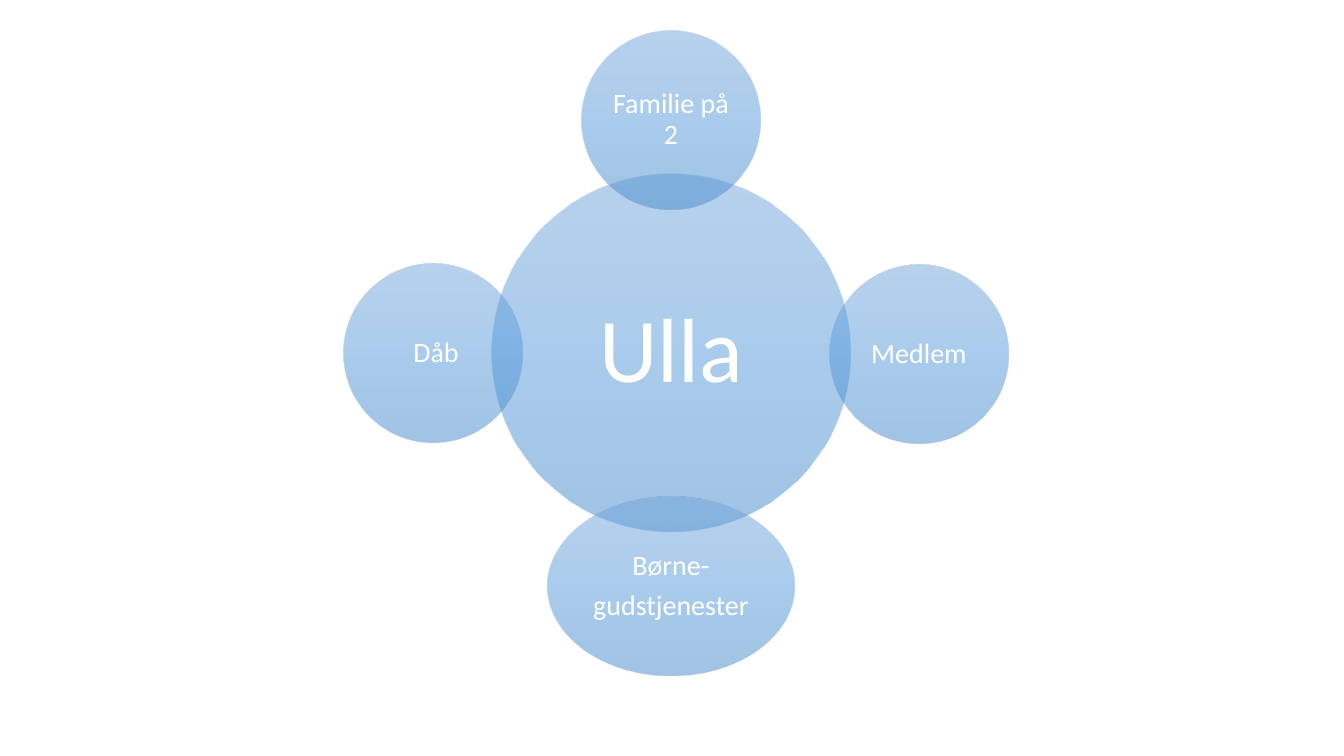
from dataclasses import dataclass

from lxml.etree import SubElement
from pptx import Presentation
from pptx.dml.color import RGBColor
from pptx.enum.shapes import MSO_SHAPE as Shape
from pptx.enum.text import MSO_ANCHOR as Anchor, PP_ALIGN as Align
from pptx.oxml.ns import qn
from pptx.util import Pt

SCALE = 12192000 / 1344


def px(length):
    return round(length * SCALE)


@dataclass(frozen=True)
class Theme:
    font: str = "Calibri"
    text: str = "FFFFFF"
    stops: tuple = ((0, "71A6DB"), (50, "559BDB"), (100, "448ACA"))
    opacity: int = 50
    hub_size: int = 65
    satellite_size: int = 20


THEME = Theme()


def fill_gradient(shape):
    shape.fill.gradient()
    shape.fill.gradient_angle = 270
    stop_list = shape._element.spPr.find(qn("a:gradFill")).find(qn("a:gsLst"))
    for stop in list(stop_list):
        stop_list.remove(stop)
    for position, color in THEME.stops:
        stop = SubElement(stop_list, qn("a:gs"), pos=str(position * 1000))
        rgb = SubElement(stop, qn("a:srgbClr"), val=color)
        SubElement(rgb, qn("a:alpha"), val=str(THEME.opacity * 1000))


def write_text(frame, text, size, inset, shift=0):
    frame.word_wrap = True
    frame.vertical_anchor = Anchor.MIDDLE
    frame.margin_right = frame.margin_top = frame.margin_bottom = px(inset)
    frame.margin_left = px(inset + shift)
    frame.text = text
    for paragraph in frame.paragraphs:
        paragraph.alignment = Align.CENTER
        paragraph.line_spacing = 0.9
        paragraph.font.name = THEME.font
        paragraph.font.size = Pt(size)
        paragraph.font.color.rgb = RGBColor.from_string(THEME.text)
    for paragraph in frame.paragraphs[:-1]:
        paragraph.space_after = Pt(round(size * 0.35))


def add_bubble(group, center_x, center_y, width, height, text, **text_format):
    shape = group.shapes.add_shape(
        Shape.OVAL, px(center_x - width / 2), px(center_y - height / 2),
        px(width), px(height))
    shape.shadow.inherit = False
    shape.line.fill.background()
    fill_gradient(shape)
    write_text(shape.text_frame, text, **text_format)


def add_radial_diagram(slide, left, top, width, height):
    group = slide.shapes.add_group_shape()
    center_x, center_y = left + width // 2, top + height // 2
    add_bubble(group, center_x, center_y, 358, 358, "Ulla",
               size=THEME.hub_size, inset=9)
    satellites = [
        ("Familie på 2", 0, -233, 179, 0),
        ("Medlem", 248, 1, 179, 0),
        ("Børne-\ngudstjenester", 0, 233, 246, 0),
        ("Dåb", -238, 0, 179, 6),
    ]
    for text, offset_x, offset_y, bubble_width, shift in satellites:
        add_bubble(group, center_x + offset_x, center_y + offset_y,
                   bubble_width, 179, text,
                   size=THEME.satellite_size, inset=3, shift=shift)


def main():
    presentation = Presentation()
    presentation.slide_width = px(1344)
    presentation.slide_height = px(756)
    slide = presentation.slides.add_slide(presentation.slide_layouts[6])
    add_radial_diagram(slide, 343, 30, 656, 646)
    presentation.save("out.pptx")


if __name__ == "__main__":
    main()
